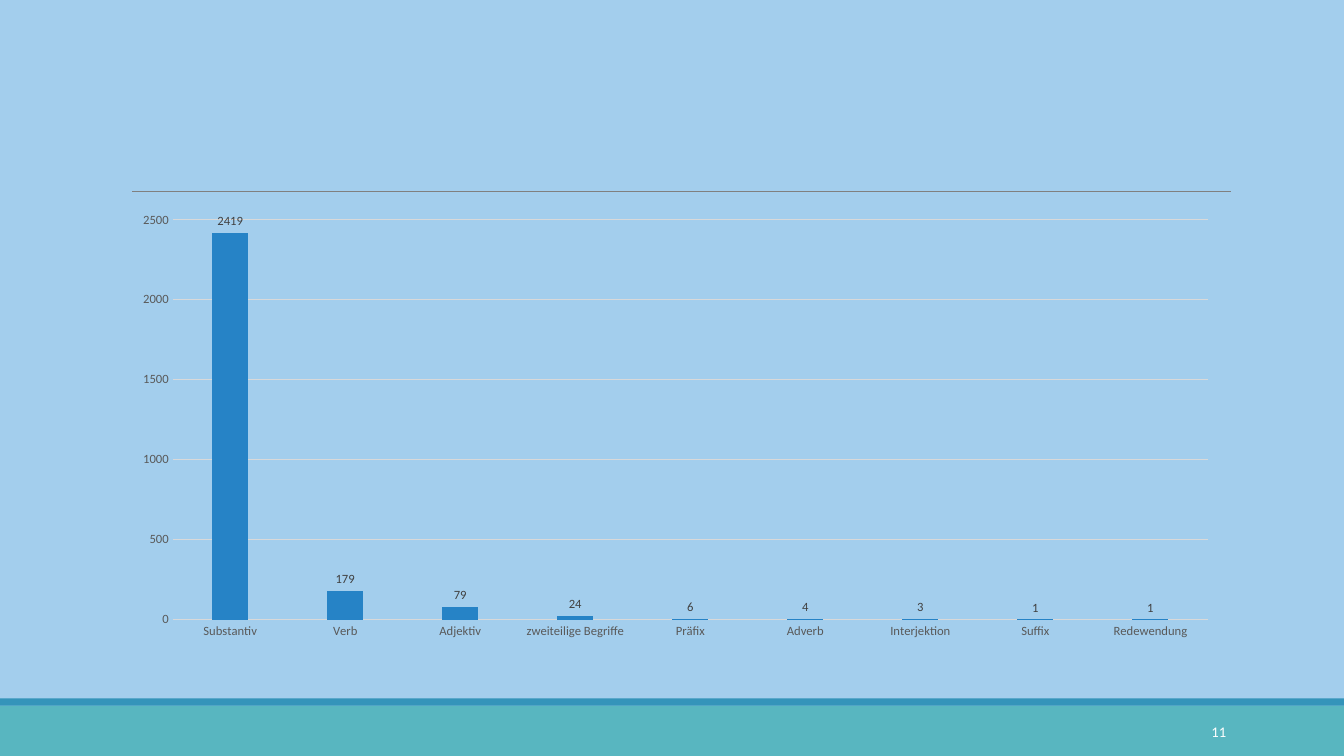
from lxml import etree
from pptx import Presentation
from pptx.chart.data import CategoryChartData
from pptx.dml.color import RGBColor
from pptx.enum.chart import XL_CHART_TYPE, XL_LABEL_POSITION, XL_TICK_MARK
from pptx.enum.shapes import MSO_CONNECTOR, MSO_SHAPE
from pptx.enum.text import MSO_ANCHOR, PP_ALIGN
from pptx.oxml.ns import qn
from pptx.util import Inches, Pt

COLUMNS = XL_CHART_TYPE.COLUMN_CLUSTERED
OUTSIDE_END = XL_LABEL_POSITION.OUTSIDE_END
NO_TICK = XL_TICK_MARK.NONE
STRAIGHT = MSO_CONNECTOR.STRAIGHT
RECTANGLE = MSO_SHAPE.RECTANGLE
MIDDLE = MSO_ANCHOR.MIDDLE
RIGHT = PP_ALIGN.RIGHT

SKY = RGBColor(0xA3, 0xCE, 0xED)
TEAL = RGBColor(0x58, 0xB6, 0xC0)
BLUE = RGBColor(0x34, 0x94, 0xBA)
COLUMN_BLUE = RGBColor(0x26, 0x83, 0xC6)
RULE_GRAY = RGBColor(0x80, 0x80, 0x80)
GRID_GRAY = RGBColor(0xD9, 0xD9, 0xD9)
AXIS_GRAY = RGBColor(0x59, 0x59, 0x59)
LABEL_GRAY = RGBColor(0x40, 0x40, 0x40)
BLACK = RGBColor(0, 0, 0)
WHITE = RGBColor(0xFF, 0xFF, 0xFF)

WORD_CLASSES = {
    "Substantiv": 2419,
    "Verb": 179,
    "Adjektiv": 79,
    "zweiteilige Begriffe": 24,
    "Präfix": 6,
    "Adverb": 4,
    "Interjektion": 3,
    "Suffix": 1,
    "Redewendung": 1,
}


def apply_format(target, values):
    for name, value in values.items():
        setattr(target, name, value)


def style_font(font, size, color):
    apply_format(font, {"name": "Calibri", "size": Pt(size)})
    font.color.rgb = color


def style_line(line, color, width):
    line.color.rgb = color
    line.width = Pt(width)


def add_band(slide, top, height, color):
    band = slide.shapes.add_shape(
        RECTANGLE, 0, Inches(top), Inches(13.33), Inches(height))
    band.shadow.inherit = False
    band.fill.solid()
    band.fill.fore_color.rgb = color
    band.line.fill.background()


def add_title_rule(slide):
    rule = slide.shapes.add_connector(
        STRAIGHT, Inches(1.31), Inches(1.9), Inches(12.21), Inches(1.9))
    style_line(rule.line, RULE_GRAY, 0.5)
    etree.SubElement(rule._element.spPr, qn("a:effectLst"))


def style_axes(chart):
    categories, counts = chart.category_axis, chart.value_axis
    for axis in (categories, counts):
        apply_format(axis, {"major_tick_mark": NO_TICK, "minor_tick_mark": NO_TICK})
        style_font(axis.tick_labels.font, 9, AXIS_GRAY)
    style_line(categories.format.line, GRID_GRAY, 0.75)
    apply_format(counts, {"minimum_scale": 0, "maximum_scale": 2500,
                          "major_unit": 500, "has_major_gridlines": True})
    counts.format.line.fill.background()
    style_line(counts.major_gridlines.format.line, GRID_GRAY, 0.75)


def add_word_class_chart(slide):
    data = CategoryChartData()
    data.categories = list(WORD_CLASSES)
    data.add_series("Series 1", list(WORD_CLASSES.values()))
    chart = slide.shapes.add_chart(
        COLUMNS, Inches(1.2), Inches(2.02), Inches(11), Inches(4.4), data).chart
    apply_format(chart, {"has_legend": False, "has_title": False})
    style_font(chart.font, 10, BLACK)
    style_axes(chart)

    columns = chart.plots[0]
    apply_format(columns, {"gap_width": 219, "overlap": -27,
                           "vary_by_categories": False, "has_data_labels": True})
    labels = columns.data_labels
    apply_format(labels, {"show_value": True, "position": OUTSIDE_END})
    style_font(labels.font, 9, LABEL_GRAY)
    fill = columns.series[0].format.fill
    fill.solid()
    fill.fore_color.rgb = COLUMN_BLUE


def add_page_number(slide, number):
    frame = slide.shapes.add_textbox(
        Inches(10.83), Inches(7.06), Inches(1.43), Inches(0.4)).text_frame
    apply_format(frame, {"word_wrap": True, "vertical_anchor": MIDDLE})
    paragraph = frame.paragraphs[0]
    paragraph.alignment = RIGHT
    run = paragraph.add_run()
    run.text = number
    style_font(run.font, 10.5, WHITE)


def main():
    """Build the slide with the word class column chart."""
    deck = Presentation()
    apply_format(deck, {"slide_width": Inches(13.33), "slide_height": Inches(7.5)})
    slide = deck.slides.add_slide(deck.slide_layouts[6])
    slide.background.fill.solid()
    slide.background.fill.fore_color.rgb = SKY
    add_band(slide, 7, 0.5, TEAL)
    add_band(slide, 6.93, 0.07, BLUE)
    add_title_rule(slide)
    add_word_class_chart(slide)
    add_page_number(slide, "11")
    deck.save("out.pptx")


if __name__ == "__main__":
    main()
